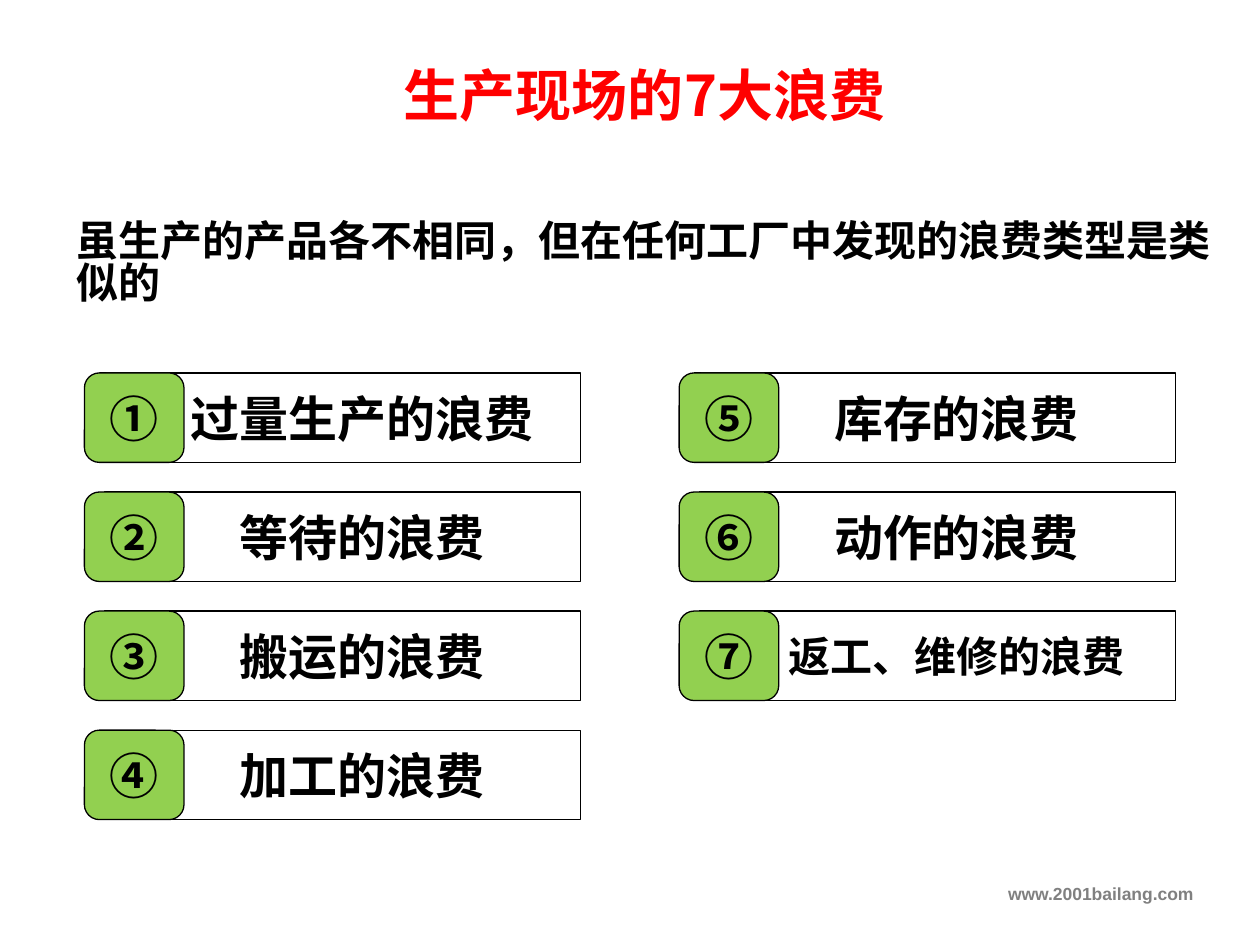
"""Build the slide on the seven wastes of the production floor."""
from lxml import etree
from pptx import Presentation
from pptx.dml.color import RGBColor
from pptx.enum.shapes import MSO_SHAPE
from pptx.enum.text import MSO_ANCHOR, MSO_AUTO_SIZE, PP_ALIGN
from pptx.oxml.ns import qn
from pptx.util import Inches, Pt

RECT, ROUNDED = MSO_SHAPE.RECTANGLE, MSO_SHAPE.ROUNDED_RECTANGLE
LEFT, CENTER, RIGHT = PP_ALIGN.LEFT, PP_ALIGN.CENTER, PP_ALIGN.RIGHT
TOP, MIDDLE = MSO_ANCHOR.TOP, MSO_ANCHOR.MIDDLE
NO_AUTOFIT = MSO_AUTO_SIZE.NONE

RED = RGBColor(0xFF, 0x00, 0x00)
BLACK = RGBColor(0x00, 0x00, 0x00)
WHITE = RGBColor(0xFF, 0xFF, 0xFF)
GREEN = RGBColor(0x92, 0xD0, 0x50)
GRAY = RGBColor(0x80, 0x80, 0x80)
CJK_FONT = "Noto Sans CJK SC"


def write(sp, text, size=28, color=BLACK, font=CJK_FONT, align=CENTER,
          anchor=MIDDLE, wrap=True, inset=0.1, spacing=None):
    tf = sp.text_frame
    tf.auto_size = NO_AUTOFIT
    tf.word_wrap = wrap
    tf.vertical_anchor = anchor
    tf.margin_left = Inches(inset)
    p = tf.paragraphs[0]
    p.alignment = align
    p.line_spacing = spacing
    r = p.add_run()
    r.text = text
    r.font.name = font
    r.font.size = Pt(size)
    r.font.bold = True
    r.font.color.rgb = color
    etree.SubElement(r.font._element, qn("a:ea"), typeface=font)


def add_box(s, shape, left, top, width, fill):
    sp = s.shapes.add_shape(shape, Inches(left), Inches(top),
                            Inches(width), Inches(0.71))
    sp.shadow.inherit = False
    sp.fill.solid()
    sp.fill.fore_color.rgb = fill
    sp.line.color.rgb = BLACK
    sp.line.width = Pt(0.75)
    return sp


prs = Presentation()
prs.slide_width, prs.slide_height = Inches(10), Inches(7.5)
s = prs.slides.add_slide(prs.slide_layouts[5])

title = s.shapes.title
title.left, title.top = Inches(2.4), Inches(0.43)
title.width, title.height = Inches(5.43), Inches(0.64)
write(title, "生产现场的7大浪费", size=32, color=RED)

intro = s.shapes.add_textbox(Inches(0.51), Inches(1.72), Inches(9.22), Inches(0.91))
write(intro, "虽生产的产品各不相同，但在任何工厂中发现的浪费类型是类似的",
      size=24, align=LEFT, anchor=TOP, spacing=0.83)

wastes = [
    ("①", "过量生产的浪费", 28),
    ("②", "等待的浪费", 28),
    ("③", "搬运的浪费", 28),
    ("④", "加工的浪费", 28),
    ("⑤", "库存的浪费", 28),
    ("⑥", "动作的浪费", 28),
    ("⑦", "返工、维修的浪费", 24),
]
for i, (number, name, size) in enumerate(wastes):
    col, row = divmod(i, 4)
    left, top = 0.67 + 4.72 * col, 2.96 + 0.945 * row
    label = add_box(s, RECT, left + 0.16, top, 3.78, WHITE)
    write(label, name, size=size, inset=0.4)
    badge = add_box(s, ROUNDED, left, top, 0.79, GREEN)
    write(badge, number, wrap=False)

footer = s.shapes.add_textbox(Inches(0), Inches(6.96), Inches(9.57), Inches(0.35))
write(footer, "www.2001bailang.com", size=10, color=GRAY, font="Arial",
      align=RIGHT, anchor=TOP)

prs.save("out.pptx")
